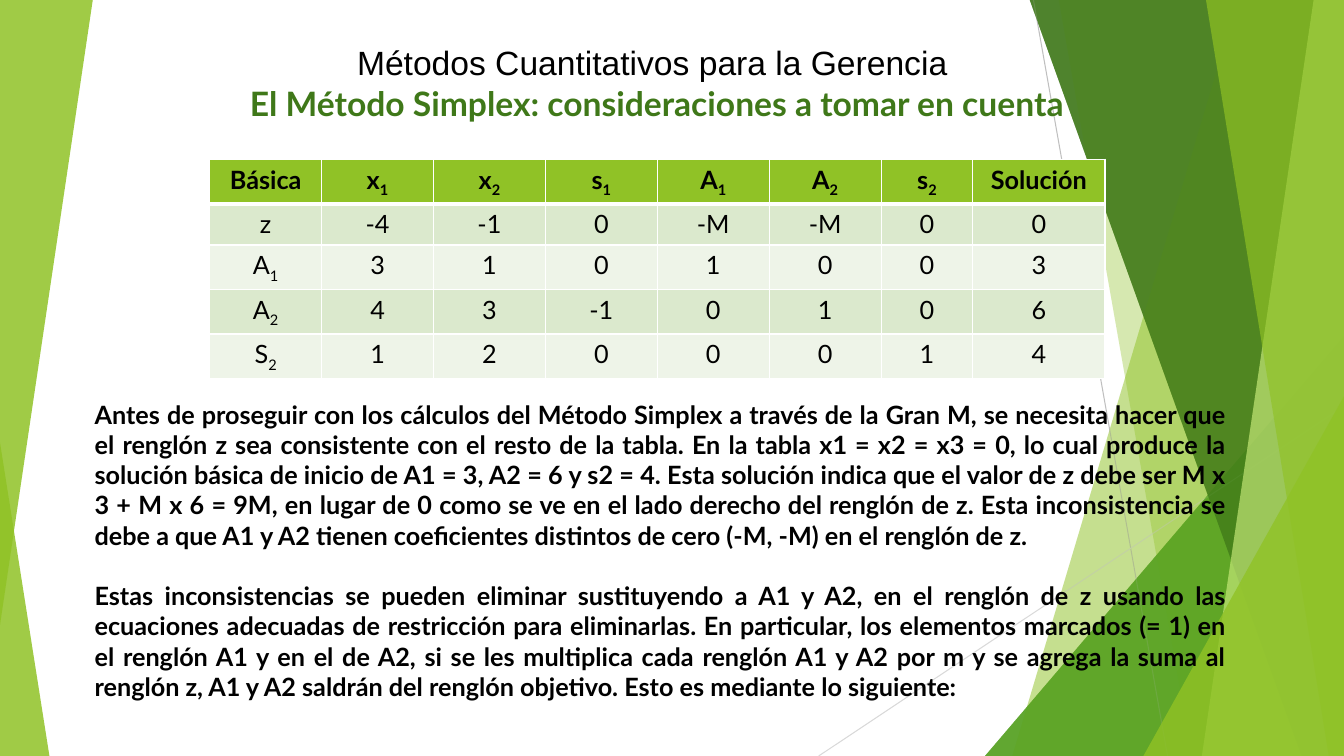
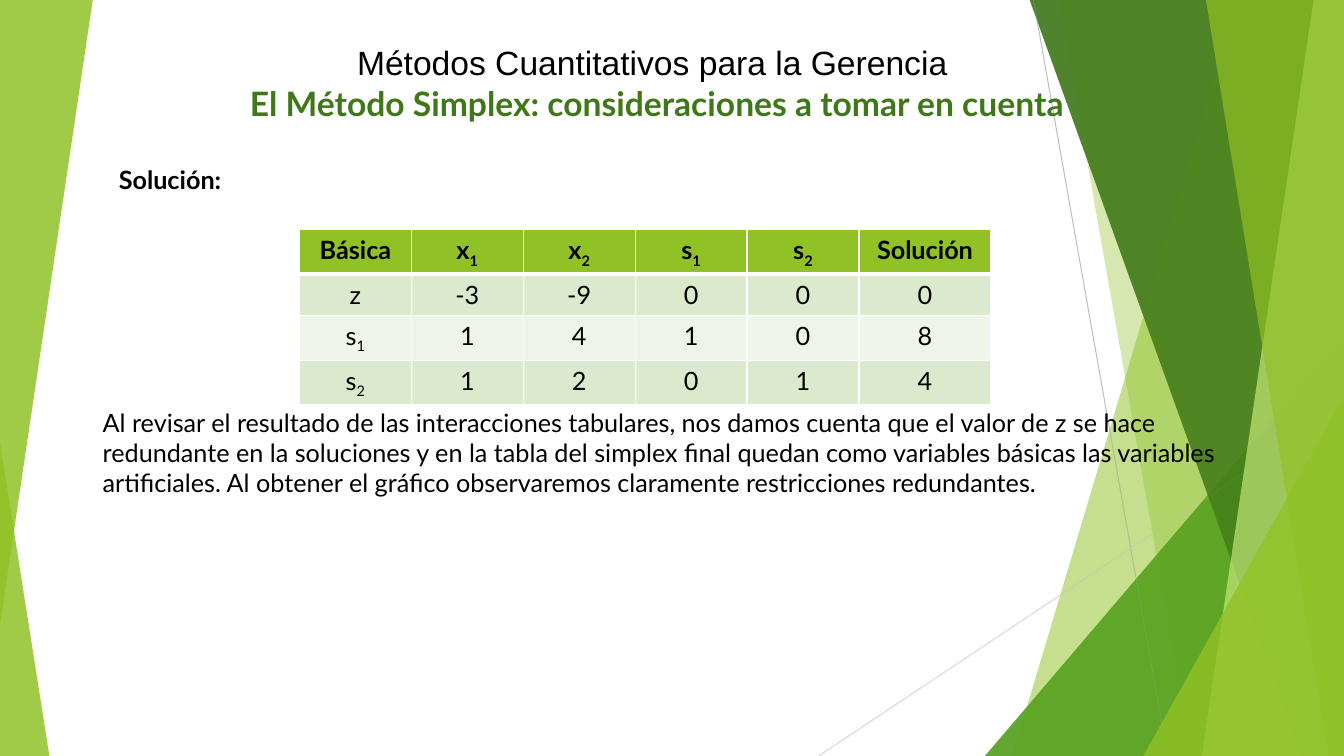
from dataclasses import dataclass

from lxml.etree import SubElement
from pptx import Presentation
from pptx.dml.color import RGBColor
from pptx.enum.shapes import MSO_CONNECTOR, MSO_SHAPE
from pptx.enum.text import PP_ALIGN
from pptx.oxml.ns import qn
from pptx.shapes.autoshape import Shape
from pptx.slide import Slide, SlideLayout
from pptx.table import _Cell
from pptx.text.text import _Paragraph
from pptx.util import Inches, Pt


@dataclass(frozen=True)
class Theme:
    lime: str = "90C226"
    leaf: str = "54A021"
    forest: str = "3F7819"
    pale_lime: str = "C0E474"
    row_tints: tuple[str, str] = ("DBE9CD", "EEF4E8")
    black: str = "000000"
    white: str = "FFFFFF"
    steep_ray: str = "BFBFBF"
    low_ray: str = "D9D9D9"
    course_font: str = "Arial"
    text_font: str = "Lato"
    title_size: int = 24
    body_size: int = 18
    paragraph_gap: float = 21.6
    ray_width: float = 0.75
    grid_width: int = 1
    header_rule_width: int = 3


@dataclass(frozen=True)
class Band:
    top_left: float
    top_right: float
    bottom_right: float
    bottom_left: float
    color: str
    opacity: int


@dataclass(frozen=True)
class Wedge:
    left: float
    top: float
    width: float
    height: float
    apex: float
    color: str
    opacity: int
    rotation: int = 0


@dataclass(frozen=True)
class Ray:
    start: tuple[float, float]
    end: tuple[float, float]
    color: str


@dataclass(frozen=True)
class Passage:
    text: str
    color: str
    font: str
    size: int
    bold: bool = False
    align: PP_ALIGN = PP_ALIGN.LEFT
    gap_before: float = 0


@dataclass(frozen=True)
class Tableau:
    left: float
    top: float
    widths: tuple[float, ...]
    rows: tuple[str, ...]


THEME = Theme()
WIDTH, HEIGHT = 13.33, 7.5
BLEED = -0.01
ROW_HEIGHT = 0.41
TEXT_WIDTH = 11.42
VARIABLE, SLACK, SOLUTION = 1.11, 0.91, 1.31

RIBBONS = (
    Band(12.28, WIDTH, WIDTH, 10.04, THEME.lime, 30),
    Band(10.5, WIDTH, WIDTH, 11.82, THEME.lime, 20),
    Wedge(9.77, 3.33, 3.56, 4.17, 1, THEME.leaf, 72),
    Band(10.21, WIDTH, WIDTH, 12.91, THEME.forest, 70),
    Band(13.03, WIDTH, WIDTH, 11.92, THEME.pale_lime, 70),
    Band(11.96, WIDTH, WIDTH, 13.18, THEME.lime, 65),
    Wedge(11.34, 3.93, 1.99, 3.57, 1, THEME.lime, 80),
)
LOWER_LEFT = Wedge(0, 4.39, 0.49, 3.11, 0, THEME.lime, 85)
UPPER_LEFT = Wedge(0, 0, 0.92, 6.2, 1, THEME.lime, 85, 180)
RAYS = (
    Ray((10.25, 0), (11.58, HEIGHT), THEME.steep_ray),
    Ray((WIDTH, 4.03), (8.12, HEIGHT), THEME.low_ray),
)
BACKDROP = (*RIBBONS, LOWER_LEFT, *RAYS, *RIBBONS, UPPER_LEFT)

TITLE = (
    Passage("Métodos Cuantitativos para la Gerencia ", THEME.black, THEME.course_font,
            THEME.title_size, align=PP_ALIGN.CENTER),
    Passage("El Método Simplex: consideraciones a tomar en cuenta", THEME.forest,
            THEME.text_font, THEME.title_size, True, PP_ALIGN.CENTER),
)
BIG_M = Tableau(
    2.08, 1.58, (*[VARIABLE] * 6, SLACK, SOLUTION),
    (
        "Básica x_1 x_2 s_1 A_1 A_2 s_2 Solución",
        "z -4 -1 0 -M -M 0 0",
        "A_1 3 1 0 1 0 0 3",
        "A_2 4 3 -1 0 1 0 6",
        "S_2 1 2 0 0 0 1 4",
    ),
)
REDUNDANT = Tableau(
    2.97, 2.28, (*[VARIABLE] * 5, SOLUTION),
    (
        "Básica x_1 x_2 s_1 s_2 Solución",
        "z -3 -9 0 0 0",
        "s_1 1 4 1 0 8",
        "s_2 1 2 0 1 4",
    ),
)
INCONSISTENCY = (
    "Antes de proseguir con los cálculos del Método Simplex a través de la Gran M, se necesita "
    "hacer que el renglón z sea consistente con el resto de la tabla. En la tabla x1 = x2 = x3 = 0, "
    "lo cual produce la solución básica de inicio de A1 = 3, A2 = 6 y s2 = 4. Esta solución indica "
    "que el valor de z debe ser M x 3 + M x 6 = 9M, en lugar de 0 como se ve en el lado derecho del "
    "renglón de z. Esta inconsistencia se debe a que A1 y A2 tienen coeficientes distintos de cero "
    "(-M, -M) en el renglón de z."
)
ELIMINATION = (
    "Estas inconsistencias se pueden eliminar sustituyendo a A1 y A2, en el renglón de z usando las "
    "ecuaciones adecuadas de restricción para eliminarlas. En particular, los elementos marcados "
    "(= 1) en el renglón A1 y en el de A2, si se les multiplica cada renglón A1 y A2 por m y se "
    "agrega la suma al renglón z, A1 y A2 saldrán del renglón objetivo. Esto es mediante lo siguiente:"
)
CONCLUSION = (
    "Al revisar el resultado de las interacciones tabulares, nos damos cuenta que el valor de z se "
    "hace redundante en la soluciones y en la tabla del simplex final quedan como variables básicas "
    "las variables artificiales. Al obtener el gráfico observaremos claramente restricciones "
    "redundantes."
)


def body(text: str, bold: bool = True, align: PP_ALIGN = PP_ALIGN.JUSTIFY,
         gap_before: float = 0) -> Passage:
    return Passage(text, THEME.black, THEME.text_font, THEME.body_size, bold, align, gap_before)


def paint(shape: Shape, color: str, opacity: int) -> None:
    shape.shadow.inherit = False
    shape.line.fill.background()
    shape.fill.solid()
    shape.fill.fore_color.rgb = RGBColor.from_string(color)
    for tone in list(shape.element.spPr.iter(qn("a:srgbClr"))):
        SubElement(tone, qn("a:alpha"), val=str(opacity * 1000))


def draw_band(slide: Slide, band: Band) -> None:
    top, bottom = Inches(BLEED), Inches(HEIGHT)
    outline = slide.shapes.build_freeform(Inches(band.top_left), top)
    outline.add_line_segments([
        (Inches(band.top_right), top),
        (Inches(band.bottom_right), bottom),
        (Inches(band.bottom_left), bottom),
    ])
    paint(outline.convert_to_shape(), band.color, band.opacity)


def draw_wedge(slide: Slide, wedge: Wedge) -> None:
    triangle = slide.shapes.add_shape(
        MSO_SHAPE.ISOSCELES_TRIANGLE, Inches(wedge.left), Inches(wedge.top),
        Inches(wedge.width), Inches(wedge.height))
    triangle.adjustments[0] = wedge.apex
    triangle.rotation = wedge.rotation
    paint(triangle, wedge.color, wedge.opacity)


def draw_ray(slide: Slide, ray: Ray) -> None:
    line = slide.shapes.add_connector(
        MSO_CONNECTOR.STRAIGHT, *(Inches(value) for value in (*ray.start, *ray.end)))
    line.line.color.rgb = RGBColor.from_string(ray.color)
    line.line.width = Pt(THEME.ray_width)
    SubElement(line.element.spPr, qn("a:effectLst"))


def move_backdrop(slide: Slide, layout: SlideLayout) -> None:
    for placeholder in list(layout.placeholders):
        layout.shapes.element.remove(placeholder.element)
    drawers = {Band: draw_band, Wedge: draw_wedge, Ray: draw_ray}
    for part in BACKDROP:
        drawers[type(part)](slide, part)
    for shape in list(slide.shapes):
        layout.shapes.element.append(shape.element)


def write_run(paragraph: _Paragraph, text: str, style: Passage, baseline: int = 0) -> None:
    run = paragraph.add_run()
    run.text = text
    run.font.name = style.font
    run.font.size = Pt(style.size)
    run.font.bold = style.bold
    run.font.color.rgb = RGBColor.from_string(style.color)
    if baseline:
        run.font._element.set("baseline", str(baseline * 1000))


def write_passages(slide: Slide, left: float, top: float, width: float, height: float,
                   passages: tuple[Passage, ...]) -> None:
    frame = slide.shapes.add_textbox(
        Inches(left), Inches(top), Inches(width), Inches(height)).text_frame
    frame.word_wrap = True
    for index, passage in enumerate(passages):
        paragraph = frame.add_paragraph() if index else frame.paragraphs[0]
        paragraph.alignment = passage.align
        paragraph.space_before = Pt(passage.gap_before)
        write_run(paragraph, passage.text, passage)


def rule_cell(cell: _Cell, row: int) -> None:
    properties = cell._tc.get_or_add_tcPr()
    heavy_sides = {0: "lnB", 1: "lnT"}
    for side in ("lnL", "lnR", "lnT", "lnB"):
        heavy = heavy_sides.get(row) == side
        width = Pt(THEME.header_rule_width if heavy else THEME.grid_width)
        border = SubElement(properties, qn(f"a:{side}"), w=str(width))
        SubElement(SubElement(border, qn("a:solidFill")), qn("a:srgbClr"), val=THEME.white)


def fill_cell(cell: _Cell, entry: str, row: int) -> None:
    rule_cell(cell, row)
    cell.fill.solid()
    tint = THEME.row_tints[(row - 1) % 2] if row else THEME.lime
    cell.fill.fore_color.rgb = RGBColor.from_string(tint)
    paragraph = cell.text_frame.paragraphs[0]
    paragraph.alignment = PP_ALIGN.CENTER
    symbol, _, subscript = entry.partition("_")
    style = body(entry, bold=row == 0)
    write_run(paragraph, symbol, style)
    if subscript:
        write_run(paragraph, subscript, style, -25)


def draw_tableau(slide: Slide, tableau: Tableau) -> None:
    grid = slide.shapes.add_table(
        len(tableau.rows), len(tableau.widths), Inches(tableau.left), Inches(tableau.top),
        Inches(sum(tableau.widths)), Inches(ROW_HEIGHT * len(tableau.rows))).table
    for column, width in zip(grid.columns, tableau.widths):
        column.width = Inches(width)
    for row, entries in enumerate(tableau.rows):
        grid.rows[row].height = Inches(ROW_HEIGHT)
        for column, entry in enumerate(entries.split()):
            fill_cell(grid.cell(row, column), entry, row)


def main() -> None:
    deck = Presentation()
    deck.slide_width, deck.slide_height = Inches(WIDTH), Inches(HEIGHT)
    blank = deck.slide_layouts[6]
    big_m, redundant = (deck.slides.add_slide(blank) for _ in range(2))
    move_backdrop(big_m, blank)
    for slide in (big_m, redundant):
        write_passages(slide, 1.88, 0.37, 9.27, 0.91, TITLE)

    write_passages(big_m, 0.84, 3.91, TEXT_WIDTH, 3.43, (
        body(INCONSISTENCY), body(ELIMINATION, gap_before=THEME.paragraph_gap)))
    draw_tableau(big_m, BIG_M)

    write_passages(redundant, 1.08, 1.58, TEXT_WIDTH, 0.4, (body("Solución:"),))
    draw_tableau(redundant, REDUNDANT)
    write_passages(redundant, 0.92, 3.99, TEXT_WIDTH, 1.01, (
        body(CONCLUSION, bold=False, align=PP_ALIGN.LEFT),))
    deck.save("out.pptx")


if __name__ == "__main__":
    main()
